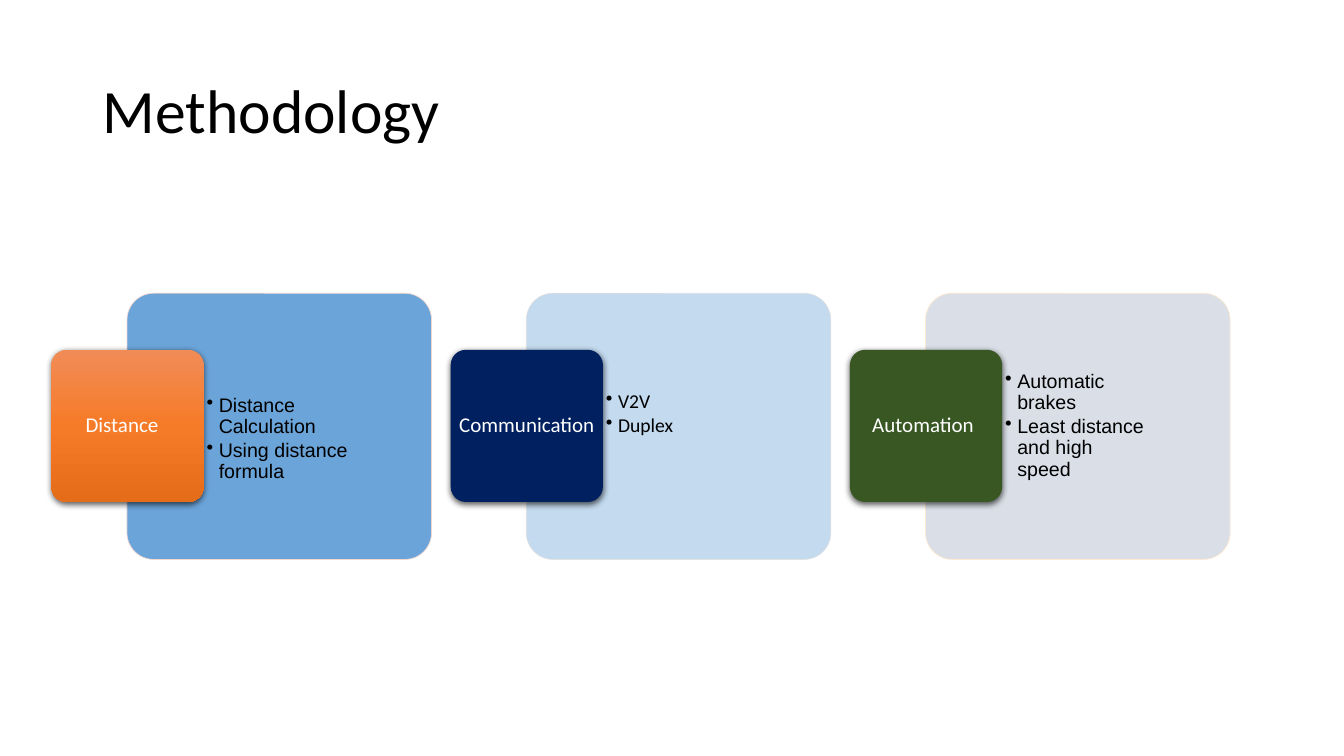
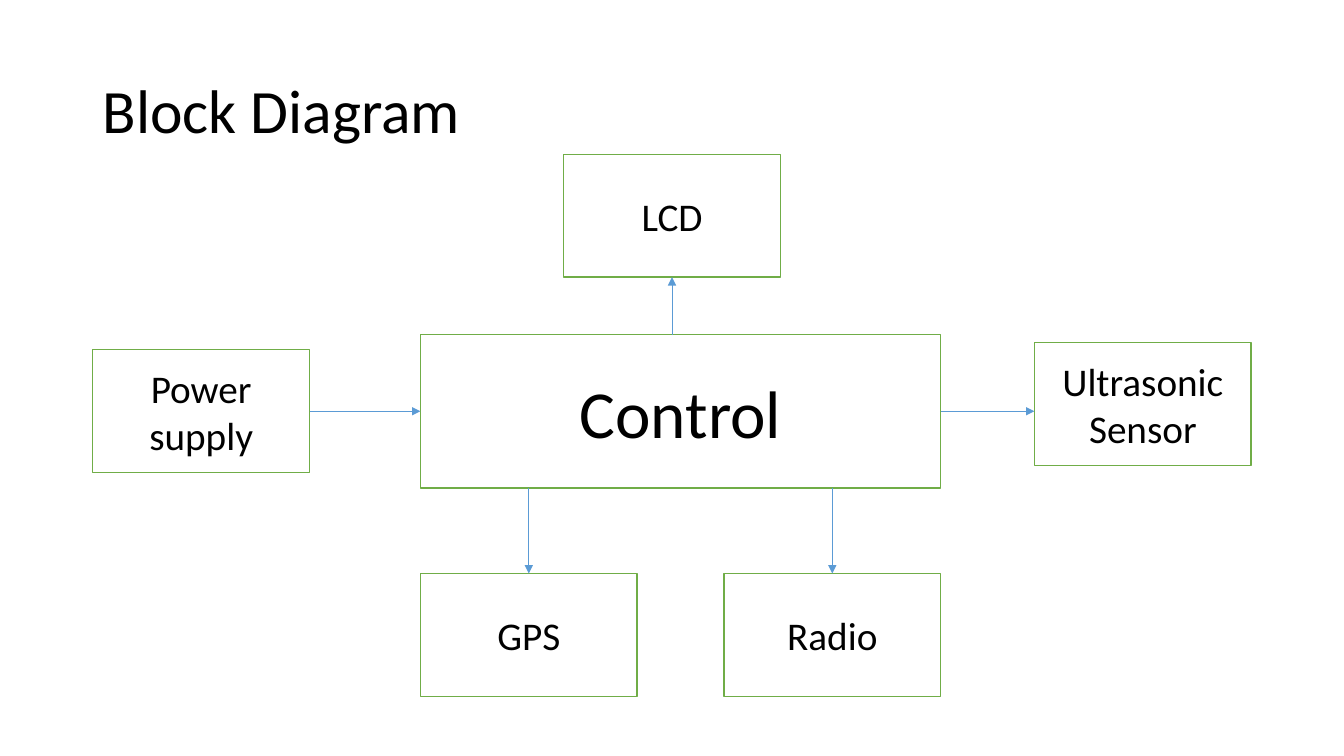
from collections import namedtuple

from lxml.etree import SubElement
from pptx import Presentation
from pptx.dml.color import RGBColor
from pptx.enum.shapes import MSO_CONNECTOR, MSO_SHAPE
from pptx.enum.text import MSO_ANCHOR, PP_ALIGN
from pptx.oxml.ns import qn
from pptx.util import Inches, Pt

BLACK = RGBColor(0x00, 0x00, 0x00)
WHITE = RGBColor(0xFF, 0xFF, 0xFF)
BLUE = RGBColor(0x5B, 0x9B, 0xD5)
PALE_BLUE = RGBColor(0xBD, 0xD7, 0xEE)
PALE_GREY = RGBColor(0xD6, 0xDC, 0xE5)
NAVY = RGBColor(0x00, 0x20, 0x60)
DARK_GREEN = RGBColor(0x38, 0x57, 0x23)
GREEN = RGBColor(0x70, 0xAD, 0x47)
PINK_EDGE = RGBColor(0xF8, 0xD7, 0xCE)
GREY_EDGE = RGBColor(0xE1, 0xE1, 0xE1)
CREAM_EDGE = RGBColor(0xFF, 0xE8, 0xCC)
ORANGES = [RGBColor(0xF1, 0x8C, 0x57), RGBColor(0xF6, 0x7B, 0x28), RGBColor(0xE5, 0x6C, 0x19)]

FONT = "Calibri"
CARD_PITCH = 3.96
MODULE_WIDTH, MODULE_HEIGHT = 2.15, 1.22

Card = namedtuple("Card", "label label_margin square panel edge bullets font shift")
CARDS = (
    Card("Distance", 0.12, ORANGES, BLUE, PINK_EDGE,
         ("Distance Calculation", "Using distance formula"), "Arial", 0.13),
    Card("Communication", 0.01, NAVY, PALE_BLUE, GREY_EDGE, ("V2V", "Duplex"), FONT, -0.12),
    Card("Automation", 0.07, DARK_GREEN, PALE_GREY, CREAM_EDGE,
         ("Automatic brakes", "Least distance and high speed"), "Arial", 0),
)


class Box(namedtuple("Box", "left top width height")):
    @property
    def right(self):
        return self.left + self.width

    @property
    def bottom(self):
        return self.top + self.height

    @property
    def center(self):
        return self.left + self.width / 2

    @property
    def middle(self):
        return self.top + self.height / 2

    def lengths(self):
        return [Inches(value) for value in self]


def write(shape, *lines, size, color=BLACK, font=FONT, align=PP_ALIGN.LEFT,
          spacing=1.0, after=0, margins=(0.1, 0.05, 0.1, 0.05), bullet=None):
    """Fill a shape with one paragraph per line, centred vertically."""
    frame = shape.text_frame
    frame.word_wrap = True
    frame.vertical_anchor = MSO_ANCHOR.MIDDLE
    (frame.margin_left, frame.margin_top,
     frame.margin_right, frame.margin_bottom) = [Inches(value) for value in margins]
    for index, text in enumerate(lines):
        para = frame.add_paragraph() if index else frame.paragraphs[0]
        para.alignment = align
        para.line_spacing = spacing
        para.space_after = Pt(after)
        if bullet:
            properties = para._p.get_or_add_pPr()
            properties.set("marL", str(Inches(0.12)))
            properties.set("indent", str(-Inches(0.12)))
            SubElement(properties, qn("a:buChar"), char=bullet)
        span = para.add_run()
        span.text = text
        span.font.name = font
        span.font.size = Pt(size)
        span.font.color.rgb = color


def add_box(page, kind, box, fill, edge=None, weight=1):
    """Add a shape; a list of colours as fill makes a gradient."""
    shape = page.shapes.add_shape(kind, *box.lengths())
    shape.shadow.inherit = False
    if isinstance(fill, list):
        fill_gradient(shape, fill)
    else:
        shape.fill.solid()
        shape.fill.fore_color.rgb = fill
    if edge is None:
        shape.line.fill.background()
    else:
        shape.line.color.rgb = edge
        shape.line.width = Pt(weight)
    return shape


def fill_gradient(shape, colors):
    """Spread the colours evenly from top to bottom."""
    shape.fill.gradient()
    shape.fill.gradient_angle = 270
    stops = shape._element.spPr.find(qn("a:gradFill")).find(qn("a:gsLst"))
    for stop in list(stops):
        stops.remove(stop)
    for index, color in enumerate(colors):
        position = 100000 * index // (len(colors) - 1)
        stop = SubElement(stops, qn("a:gs"), pos=str(position))
        SubElement(stop, qn("a:srgbClr"), val=str(color))


def set_opacity(shape, percent):
    for color in shape._element.spPr.iter(qn("a:srgbClr")):
        SubElement(color, qn("a:alpha"), val=str(percent * 1000))


def drop_shadow(shape):
    effects = shape._element.spPr.find(qn("a:effectLst"))
    shadow = SubElement(effects, qn("a:outerShdw"), blurRad=str(Pt(4.5)),
                        dist=str(Pt(1.5)), dir="5400000", algn="ctr", rotWithShape="0")
    color = SubElement(shadow, qn("a:srgbClr"), val=str(BLACK))
    SubElement(color, qn("a:alpha"), val="63000")


def add_arrow(page, start, end):
    arrow = page.shapes.add_connector(
        MSO_CONNECTOR.STRAIGHT, *[Inches(value) for value in (*start, *end)])
    arrow.line.color.rgb = BLUE
    arrow.line.width = Pt(0.5)
    SubElement(arrow.line._get_or_add_ln(), qn("a:tailEnd"), type="triangle")
    SubElement(arrow._element.spPr, qn("a:effectLst"))


def add_page(deck, title):
    page = deck.slides.add_slide(deck.slide_layouts[6])
    heading = page.shapes.add_textbox(*Box(0.92, 0.4, 11.5, 1.45).lengths())
    write(heading, title, size=44, spacing=0.9)
    return page


def add_card(page, left, top, card):
    panel = add_box(page, MSO_SHAPE.ROUNDED_RECTANGLE,
                    Box(left + 0.75, top, 3.02, 2.64), card.panel, card.edge, 0.5)
    panel.adjustments[0] = 0.1
    set_opacity(panel, 90)

    details = page.shapes.add_textbox(
        *Box(left + 1.5, top + 0.39 + card.shift, 1.47, 1.85).lengths())
    write(details, *card.bullets, size=14, font=card.font, spacing=0.9, after=2.1,
          margins=(0.04, 0.01, 0.02, 0.01), bullet="•")

    square = add_box(page, MSO_SHAPE.ROUNDED_RECTANGLE,
                     Box(left, top + 0.56, 1.51, 1.51), card.square)
    square.adjustments[0] = 0.1
    drop_shadow(square)
    write(square, card.label, size=15, color=WHITE, align=PP_ALIGN.CENTER,
          spacing=0.9, margins=(0.01, 0.01, card.label_margin, 0.01))


def add_block(page, box, label, size=28):
    block = add_box(page, MSO_SHAPE.RECTANGLE, box, WHITE, GREEN)
    write(block, label, size=size, align=PP_ALIGN.CENTER)


def methodology_page(deck):
    page = add_page(deck, "Methodology")
    for index, card in enumerate(CARDS):
        add_card(page, 0.51 + index * CARD_PITCH, 2.91, card)


def block_diagram_page(deck):
    page = add_page(deck, "Block Diagram")
    board = Box(4.17, 3.32, 5.16, 1.52)
    gps, radio, display, power, sensor = [
        Box(left, top, MODULE_WIDTH, MODULE_HEIGHT)
        for left, top in ((board.left, 5.69), (board.right - MODULE_WIDTH, 5.69),
                          (5.59, 1.53), (0.92, 3.47), (10.26, 3.4))]

    add_block(page, board, "Control", size=48)
    for box, label in ((gps, "GPS"), (radio, "Radio"), (display, "LCD"),
                       (power, "Power supply"), (sensor, "Ultrasonic Sensor")):
        add_block(page, box, label)

    add_arrow(page, (power.right, board.middle), (board.left, board.middle))
    add_arrow(page, (board.right, board.middle), (sensor.left, board.middle))
    add_arrow(page, (display.center, board.top), (display.center, display.bottom))
    for module in (gps, radio):
        add_arrow(page, (module.center, board.bottom), (module.center, module.top))


def main():
    deck = Presentation()
    deck.slide_width = Inches(13.33)
    deck.slide_height = Inches(7.5)
    methodology_page(deck)
    block_diagram_page(deck)
    deck.save("out.pptx")


if __name__ == "__main__":
    main()
